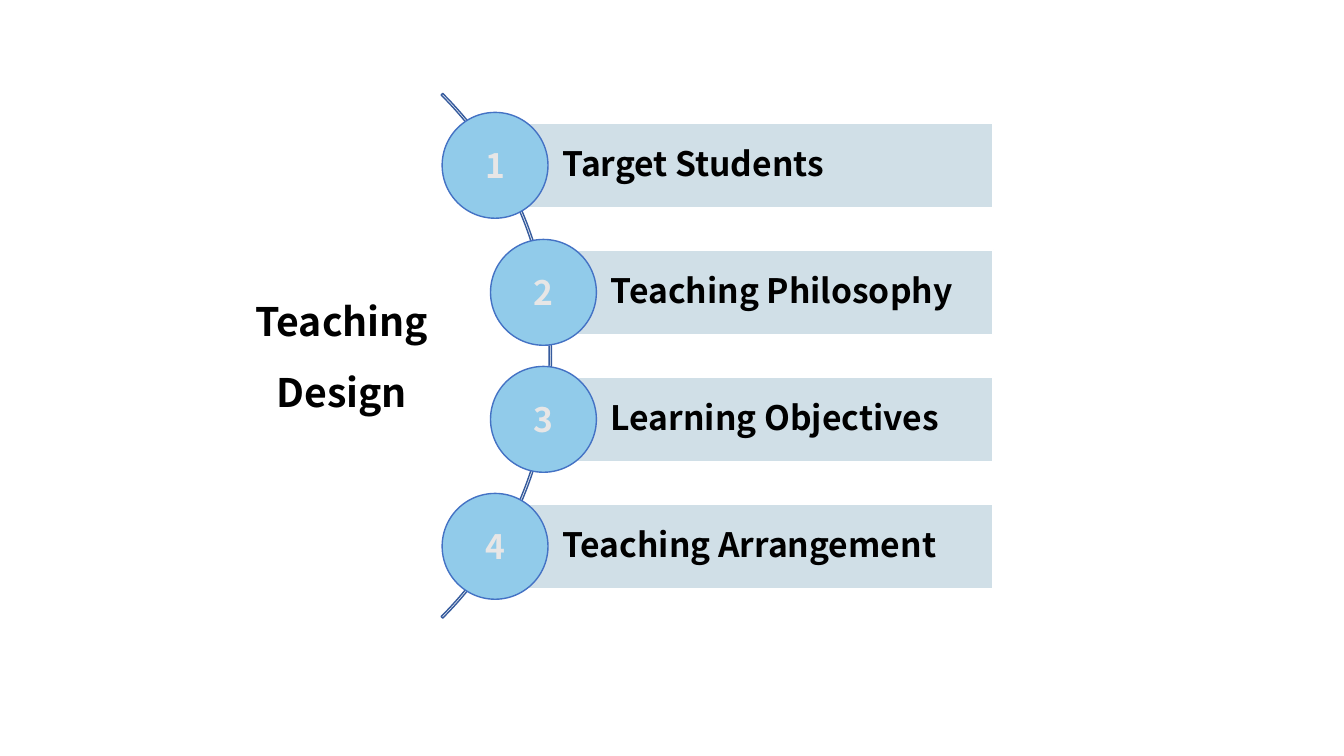
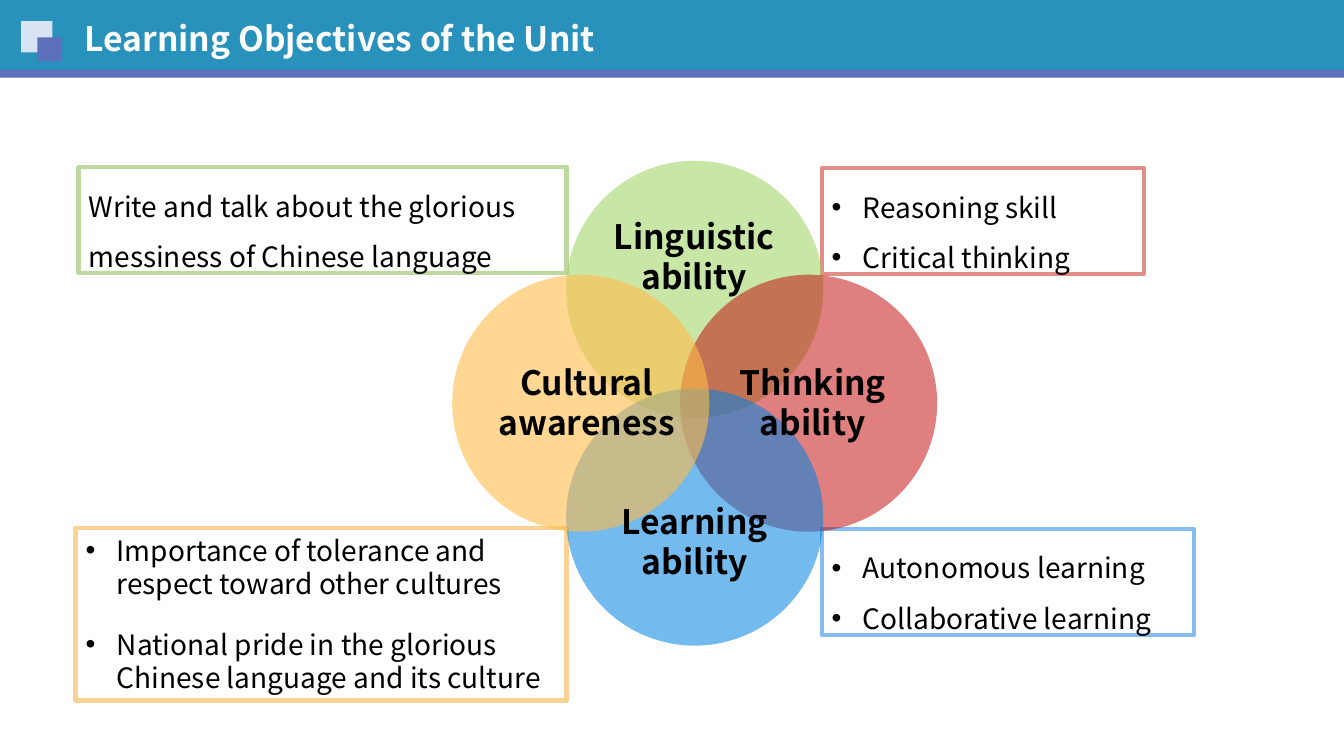
from lxml import etree
from pptx import Presentation
from pptx.dml.color import RGBColor
from pptx.enum.shapes import MSO_SHAPE as Preset
from pptx.enum.text import MSO_ANCHOR as Anchor, MSO_AUTO_SIZE as AutoSize, PP_ALIGN as Align
from pptx.oxml.ns import qn
from pptx.util import Inches, Pt

FONT = "Noto Sans CJK SC"
BLACK, WHITE = "000000", "FFFFFF"
BAND_BLUE, ACCENT, PALE = "2892BC", "5E70BB", "DAE3F3"


def paint(color_format, color):
    """Make a fill or line solid in a hex colour."""
    color_format.solid()
    color_format.fore_color.rgb = RGBColor.from_string(color)


def add_outline(shape, color, width):
    paint(shape.line.fill, color)
    shape.line.width = Pt(width)


def add_preset(slide, preset, box, fill=None, line=None, line_width=1, opacity=100):
    shape = slide.shapes.add_shape(preset, *map(Inches, box))
    shape.shadow.inherit = False
    if fill:
        paint(shape.fill, fill)
        if opacity < 100:
            tint = shape.fill._xPr.find(".//" + qn("a:srgbClr"))
            etree.SubElement(tint, qn("a:alpha"), val=str(opacity * 1000))
    else:
        shape.fill.background()
    if line:
        add_outline(shape, line, line_width)
    else:
        shape.line.fill.background()
    return shape


def add_bullet(paragraph):
    properties = paragraph._p.get_or_add_pPr()
    properties.set("marL", str(Inches(0.31)))
    properties.set("indent", str(-Inches(0.31)))
    etree.SubElement(properties, qn("a:buFont"), typeface="Arial")
    etree.SubElement(properties, qn("a:buChar"), char="•")


def write(shape, lines, size=24, color=BLACK, bold=True, align=Align.LEFT,
          anchor=Anchor.TOP, spacing=1.0, gap=0, bulleted=False):
    """Fill a shape with one paragraph per line, gap points apart."""
    frame = shape.text_frame
    frame.word_wrap = True
    frame.auto_size = AutoSize.NONE
    frame.vertical_anchor = anchor
    for i, line in enumerate(lines):
        paragraph = frame.add_paragraph() if i else frame.paragraphs[0]
        paragraph.alignment = align
        paragraph.line_spacing = spacing
        paragraph.space_before = Pt(gap if i else 0)
        if bulleted:
            add_bullet(paragraph)
        run = paragraph.add_run()
        run.text = line
        run.font.name = FONT
        run.font.size = Pt(size)
        run.font.bold = bold
        run.font.color.rgb = RGBColor.from_string(color)


def add_text(slide, box, lines, **style):
    text_box = slide.shapes.add_textbox(*map(Inches, box))
    write(text_box, lines, **style)
    return text_box


def place_title(slide, box, lines, **style):
    title = slide.shapes.title
    title.left, title.top, title.width, title.height = map(Inches, box)
    write(title, lines, **style)
    return title


def add_header(slide, heading):
    add_preset(slide, Preset.RECTANGLE, (0, 0, 13.33, 0.76), BAND_BLUE)
    stripe = add_preset(slide, Preset.RECTANGLE, (0, 0.69, 13.33, 0.08), ACCENT)
    title = place_title(slide, (0.74, 0.13, 8.38, 0.5), [heading], color=WHITE)
    stripe.element.addnext(title.element)
    add_preset(slide, Preset.RECTANGLE, (0.21, 0.21, 0.31, 0.31), PALE)
    add_preset(slide, Preset.RECTANGLE, (0.37, 0.37, 0.24, 0.24), ACCENT)


def add_agenda_row(slide, number, topic, center_x, center_y):
    """Draw a bar that starts behind the middle of its numbered circle."""
    bar_height, bar_right, diameter = 0.84, 9.85, 1.05
    bar = add_preset(slide, Preset.RECTANGLE,
                     (center_x, center_y - bar_height / 2, bar_right - center_x, bar_height),
                     "D0DFE7", WHITE)
    bar.text_frame.margin_left = Inches(0.67)
    write(bar, [topic], anchor=Anchor.MIDDLE, spacing=0.9)
    circle = add_preset(slide, Preset.OVAL,
                        (center_x - diameter / 2, center_y - diameter / 2, diameter, diameter),
                        "91CBEA", "4472C4")
    write(circle, [str(number)], color="E7E6E6", align=Align.CENTER, anchor=Anchor.MIDDLE)


def build_agenda(slide):
    arc = add_preset(slide, Preset.BLOCK_ARC, (-1.89, -0.15, 7.36, 7.36), line="365B9D")
    for i, value in enumerate((189, 27, 0.003)):
        arc.adjustments[i] = value
    place_title(slide, (2.33, 2.67, 2.12, 1.43), ["Teaching", "Design"],
                size=28, align=Align.CENTER, spacing=1.5)
    outer_x, inner_x = 4.91, 5.39
    topics = [
        ("Target Students", outer_x),
        ("Teaching Philosophy", inner_x),
        ("Learning Objectives", inner_x),
        ("Teaching Arrangement", outer_x),
    ]
    for i, (topic, center_x) in enumerate(topics):
        add_agenda_row(slide, i + 1, topic, center_x, 1.64 + 1.26 * i)


def build_objectives(slide):
    add_header(slide, "Learning Objectives of the Unit")

    open_list = {"spacing": 1.5, "bulleted": True}
    details = [
        ((0.78, 1.66, 4.84, 1.05), "BDD9A0", {"spacing": 1.5},
         ["Write and talk about the glorious messiness of Chinese language"]),
        ((0.75, 5.24, 4.87, 1.71), "FAD294", {"gap": 19, "bulleted": True},
         ["Importance of tolerance and respect toward other cultures",
          "National pride in the glorious Chinese language and its culture"]),
        ((8.15, 1.67, 3.2, 1.05), "E38D88", open_list,
         ["Reasoning skill", "Critical thinking"]),
        ((8.15, 5.25, 3.69, 1.05), "85BCF1", open_list,
         ["Autonomous learning", "Collaborative learning"]),
    ]
    for box, color, style, lines in details:
        add_outline(add_text(slide, box, lines, size=20, bold=False, **style), color, 3)

    center_x, center_y, offset, diameter = 6.89, 4.0, 1.13, 2.55
    abilities = [
        ("Linguistic ability", (0, -1), "92D050", 50, (5.96, 2.09, 1.85, 0.91)),
        ("Thinking ability", (1, 0), "C00000", 50, (7.01, 3.54, 2.1, 0.91)),
        ("Learning ability", (0, 1), "0083E3", 55, (6.05, 4.92, 1.68, 0.91)),
        ("Cultural awareness", (-1, 0), "FFBD4B", 60, (4.3, 3.54, 3.04, 0.91)),
    ]
    for _, (dx, dy), color, opacity, _ in abilities:
        left = center_x + dx * offset - diameter / 2
        top = center_y + dy * offset - diameter / 2
        add_preset(slide, Preset.OVAL, (left, top, diameter, diameter), color, opacity=opacity)
    for label, _, _, _, label_box in abilities:
        add_text(slide, label_box, [label], align=Align.CENTER)


def main():
    deck = Presentation()
    deck.slide_width, deck.slide_height = Inches(13.33), Inches(7.5)
    title_only = deck.slide_layouts[5]
    for build in (build_agenda, build_objectives):
        build(deck.slides.add_slide(title_only))
    deck.save("out.pptx")


if __name__ == "__main__":
    main()
